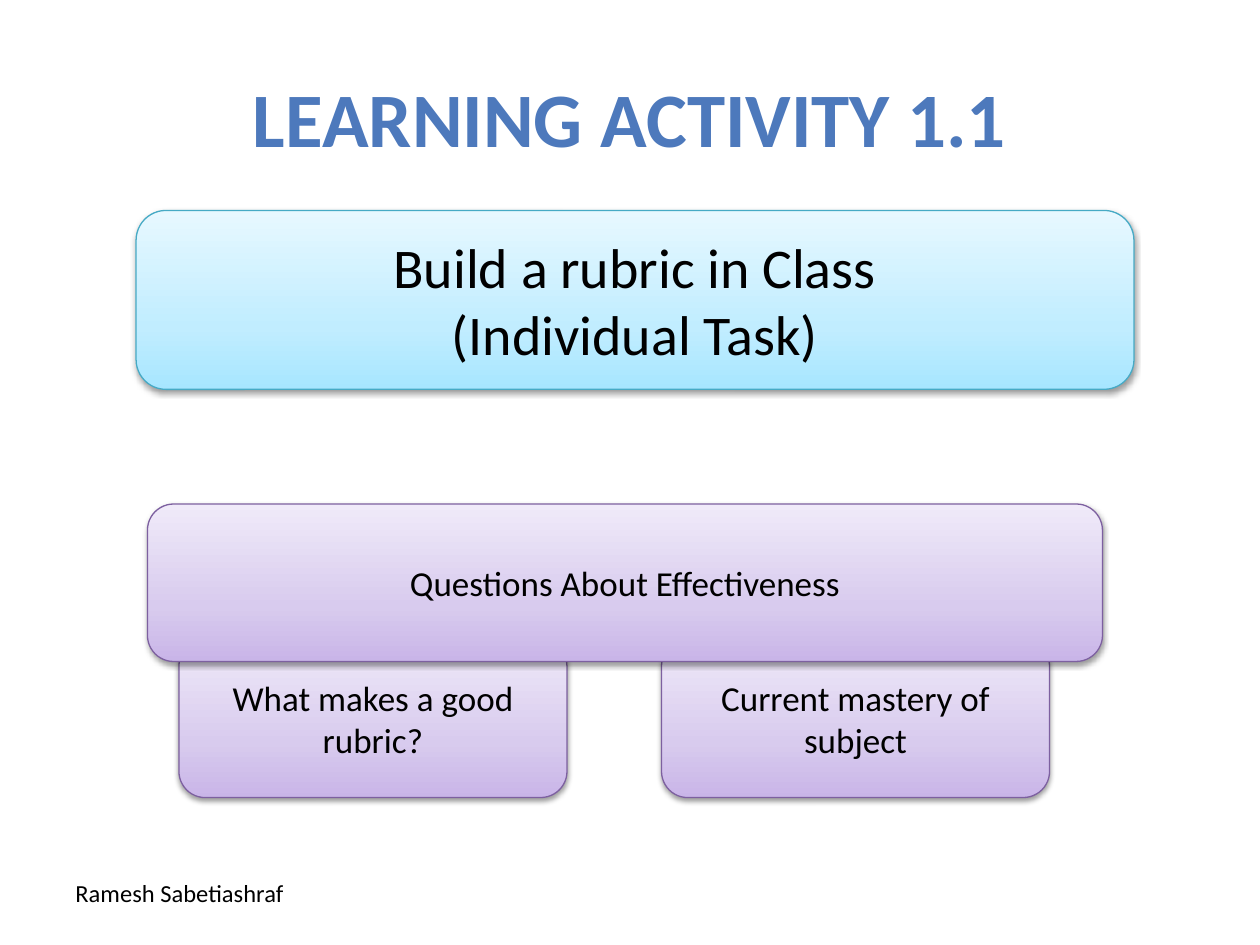
from lxml import etree
from pptx import Presentation
from pptx.dml.color import RGBColor
from pptx.enum.shapes import MSO_SHAPE
from pptx.enum.text import MSO_ANCHOR, PP_ALIGN
from pptx.oxml.ns import qn
from pptx.util import Inches, Pt

ROUNDED = MSO_SHAPE.ROUNDED_RECTANGLE
CENTER, LEFT = PP_ALIGN.CENTER, PP_ALIGN.LEFT
MIDDLE, TOP = MSO_ANCHOR.MIDDLE, MSO_ANCHOR.TOP

FONT = "Calibri"
BLACK = RGBColor(0x00, 0x00, 0x00)
WHITE = RGBColor(0xFF, 0xFF, 0xFF)
TITLE_BLUE = RGBColor(0x4D, 0x79, 0xBC)
AQUA_LINE = RGBColor(0x46, 0xAA, 0xC5)
PURPLE_LINE = RGBColor(0x7D, 0x60, 0xA0)
# Gradient stops, bottom to top: (percent, colour)
AQUA = [(0, RGBColor(0xA7, 0xE6, 0xFF)), (35, RGBColor(0xC1, 0xED, 0xFF)),
        (100, RGBColor(0xE7, 0xF8, 0xFF))]
PURPLE = [(0, RGBColor(0xC9, 0xB5, 0xE8)), (35, RGBColor(0xD8, 0xCB, 0xEE)),
          (100, RGBColor(0xF0, 0xEA, 0xF9))]

# Content
TITLE = "LEARNING ACTIVITY 1.1"
AUTHOR = "Ramesh Sabetiashraf"
TASK = ["Build a rubric in Class", "(Individual Task)"]
HEADING = "Questions About Effectiveness"
QUESTIONS = ["What makes a good rubric?", "Current mastery of subject"]

# Question cards, tucked under the heading
CARD_LEFT, CARD_TOP, CARD_W, CARD_H, CARD_GAP = 1.42, 5.08, 3.08, 1.25, 0.75


def write(shape, lines, size, color=BLACK, bold=False, align=CENTER, anchor=MIDDLE):
    tf = shape.text_frame
    tf.word_wrap = True
    tf.vertical_anchor = anchor
    for i, line in enumerate(lines):
        p = tf.paragraphs[0] if i == 0 else tf.add_paragraph()
        p.alignment = align
        r = p.add_run()
        r.text = line
        r.font.name, r.font.size, r.font.bold = FONT, Pt(size), bold
        r.font.color.rgb = color


def add_text(s, box, lines, size, **style):
    sp = s.shapes.add_textbox(*map(Inches, box))
    write(sp, lines, size, **style)
    return sp


def add_color(parent, color):
    return etree.SubElement(parent, qn("a:srgbClr"), val=str(color))


def add_card(s, box, lines, size, stops, line_color):
    sp = s.shapes.add_shape(ROUNDED, *map(Inches, box))
    sp.line.color.rgb = line_color
    sp.line.width = Pt(0.75)

    # Three-stop vertical gradient
    sp.fill.gradient()
    sp.fill.gradient_angle = 90
    stop_list = next(sp._element.spPr.iter(qn("a:gsLst")))
    for old in list(stop_list):
        stop_list.remove(old)
    for percent, color in stops:
        add_color(etree.SubElement(stop_list, qn("a:gs"), pos=str(percent * 1000)), color)

    # Soft shadow straight below
    sp.shadow.inherit = False
    effects = sp._element.spPr.find(qn("a:effectLst"))
    shadow = etree.SubElement(effects, qn("a:outerShdw"), blurRad="40000",
                              dist="20000", dir="5400000", rotWithShape="0")
    etree.SubElement(add_color(shadow, BLACK), qn("a:alpha"), val="38000")

    write(sp, lines, size)


def main():
    prs = Presentation()
    prs.slide_width, prs.slide_height = Inches(10), Inches(7.5)
    s = prs.slides.add_slide(prs.slide_layouts[6])

    # Author and title
    add_text(s, (0.5, 6.92, 2.75, 0.57), [AUTHOR], 14, align=LEFT, anchor=TOP)
    title = add_text(s, (0.5, 0.3, 9, 1.25), [TITLE], 44, color=TITLE_BLUE, bold=True)
    title.fill.solid()
    title.fill.fore_color.rgb = WHITE

    # Task
    add_card(s, (1.08, 1.67, 7.92, 1.42), TASK, 32, AQUA, AQUA_LINE)

    # Questions, then the heading over their top edges
    for i, question in enumerate(QUESTIONS):
        left = CARD_LEFT + i * (CARD_W + CARD_GAP)
        add_card(s, (left, CARD_TOP, CARD_W, CARD_H), [question], 20, PURPLE, PURPLE_LINE)
    add_card(s, (1.17, 4, 7.58, 1.25), [HEADING], 20, PURPLE, PURPLE_LINE)

    prs.save("out.pptx")


if __name__ == "__main__":
    main()
